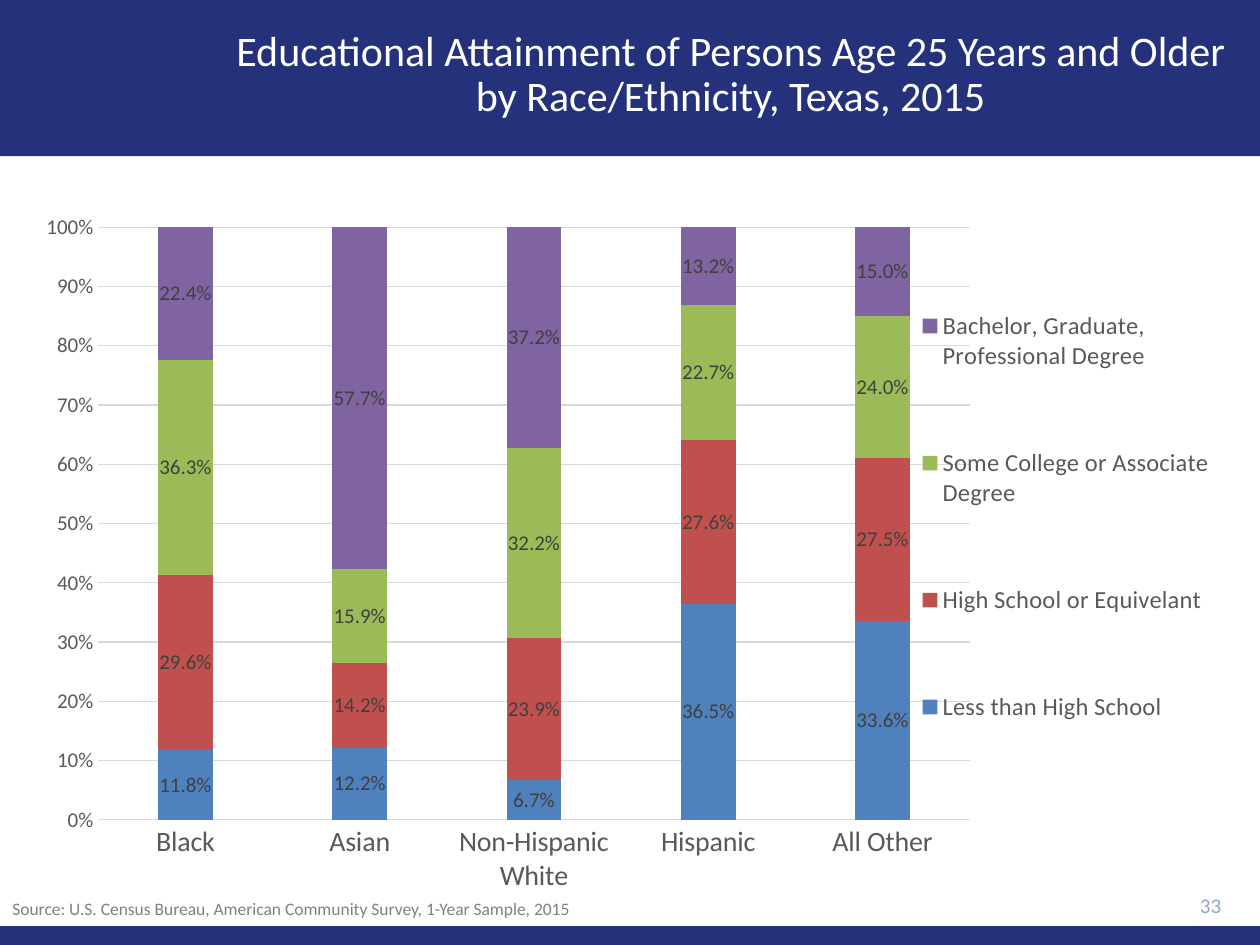
"""Build a slide charting educational attainment by race and ethnicity in Texas."""
from lxml.etree import SubElement
from pptx import Presentation
from pptx.chart.data import CategoryChartData
from pptx.dml.color import RGBColor
from pptx.enum.chart import XL_CHART_TYPE as ChartType, XL_LEGEND_POSITION as LegendPos
from pptx.enum.chart import XL_TICK_MARK as TickMark
from pptx.enum.shapes import MSO_SHAPE as Shape
from pptx.enum.text import MSO_ANCHOR as Anchor, PP_ALIGN as Align
from pptx.oxml.ns import qn
from pptx.util import Inches, Pt

NAVY = RGBColor(0x25, 0x32, 0x7B)
WHITE = RGBColor(0xFF, 0xFF, 0xFF)
PALE_BLUE = RGBColor(0x8F, 0xA5, 0xD1)
GRAY = RGBColor(0x80, 0x80, 0x80)
AXIS_GRAY = RGBColor(0x59, 0x59, 0x59)
LABEL_GRAY = RGBColor(0x40, 0x40, 0x40)
GRID_GRAY = RGBColor(0xD9, 0xD9, 0xD9)
BLUE = RGBColor(0x4F, 0x81, 0xBD)
RED = RGBColor(0xC0, 0x50, 0x4D)
GREEN = RGBColor(0x9B, 0xBB, 0x59)
PURPLE = RGBColor(0x80, 0x64, 0xA2)
FONT = "Calibri"

TITLE = "Educational Attainment of Persons Age 25 Years and Older by Race/Ethnicity, Texas, 2015"
SOURCE = "Source: U.S. Census Bureau, American Community Survey, 1-Year Sample, 2015"
PAGE = "33"
GROUPS = ["Black", "Asian", "Non-Hispanic White", "Hispanic", "All Other"]
LEVELS = [
    ("Less than High School", BLUE, (0.118, 0.122, 0.067, 0.365, 0.336)),
    ("High School or Equivelant", RED, (0.296, 0.142, 0.239, 0.276, 0.275)),
    ("Some College or Associate Degree", GREEN, (0.363, 0.159, 0.322, 0.227, 0.24)),
    ("Bachelor, Graduate, Professional Degree", PURPLE, (0.224, 0.577, 0.372, 0.132, 0.15)),
]
WIDTH, HEIGHT = 10, 7.5
BANDS = [(0, 1.24), (7.35, 0.15)]
CHART_BOX = (0.17, 1.58, 10.17, 5.6)
PLOT_SHARE = (0.06, 0.04, 0.68, 0.84)
LEGEND_SHARE = (0.69, 0.05, 0.25, 0.8)


def style(font, size, color):
    font.name, font.size, font.bold = FONT, Pt(size), False
    font.color.rgb = color


def add_band(slide, top, height):
    band = slide.shapes.add_shape(Shape.RECTANGLE, *map(Inches, (0, top, WIDTH, height)))
    band.shadow.inherit = False
    band.fill.solid()
    band.fill.fore_color.rgb = NAVY
    band.line.fill.background()


def add_text(slide, box, text, size, color, align=Align.LEFT, anchor=Anchor.TOP, spacing=None):
    frame = slide.shapes.add_textbox(*map(Inches, box)).text_frame
    frame.word_wrap = True
    frame.vertical_anchor = anchor
    paragraph = frame.paragraphs[0]
    paragraph.text = text
    paragraph.alignment = align
    paragraph.line_spacing = spacing
    style(paragraph.font, size, color)


def place(part, index, shares, inner=False):
    for old in part.findall(qn("c:layout")):
        part.remove(old)
    layout = part.makeelement(qn("c:layout"))
    part.insert(index, layout)
    manual = SubElement(layout, qn("c:manualLayout"))
    settings = [("layoutTarget", "inner")] if inner else []
    settings += [("xMode", "edge"), ("yMode", "edge"), *zip("xywh", shares)]
    for tag, value in settings:
        SubElement(manual, qn(f"c:{tag}")).set("val", str(value))


def style_axes(chart):
    for axis, size in ((chart.category_axis, 16), (chart.value_axis, 12)):
        axis.major_tick_mark = axis.minor_tick_mark = TickMark.NONE
        style(axis.tick_labels.font, size, AXIS_GRAY)
    values = chart.value_axis
    values.maximum_scale, values.minimum_scale, values.major_unit = 1, 0, 0.1
    values.tick_labels.number_format = "0%"
    values.tick_labels.number_format_is_linked = False
    values.format.line.fill.background()
    for line in (chart.category_axis.format.line, values.major_gridlines.format.line):
        line.color.rgb = GRID_GRAY
        line.width = Pt(0.75)


def add_attainment_chart(slide):
    data = CategoryChartData(number_format="0.0%")
    data.categories = GROUPS
    for level, _, shares in LEVELS:
        data.add_series(level, shares)
    chart = slide.shapes.add_chart(
        ChartType.COLUMN_STACKED_100, *map(Inches, CHART_BOX), data).chart
    chart.has_title = False
    style(chart.font, 10, RGBColor(0, 0, 0))
    style_axes(chart)

    plot = chart.plots[0]
    plot.gap_width, plot.overlap, plot.vary_by_categories = 219, 100, False
    for series, (_, color, _) in zip(plot.series, LEVELS):
        series.format.fill.solid()
        series.format.fill.fore_color.rgb = color
        labels = series.data_labels
        labels.show_value = True
        labels.number_format = "0.0%"
        labels.number_format_is_linked = False
        style(labels.font, 12, LABEL_GRAY)

    chart.has_legend = True
    legend = chart.legend
    legend.position = LegendPos.CORNER
    legend.include_in_layout = False
    style(legend.font, 14, AXIS_GRAY)
    root = chart.element
    place(root.find(f".//{qn('c:plotArea')}"), 0, PLOT_SHARE, inner=True)
    place(root.find(f".//{qn('c:legend')}"), 1, LEGEND_SHARE)


def main():
    deck = Presentation()
    deck.slide_width, deck.slide_height = Inches(WIDTH), Inches(HEIGHT)
    slide = deck.slides.add_slide(deck.slide_layouts[6])
    for top, height in BANDS:
        add_band(slide, top, height)
    add_attainment_chart(slide)
    add_text(slide, (8.9, 7.01, 0.89, 0.34), PAGE, 12, PALE_BLUE, Align.RIGHT, Anchor.MIDDLE)
    add_text(slide, (1.7, 0.1, 8.2, 1), TITLE, 24, WHITE, Align.CENTER, Anchor.MIDDLE, 0.9)
    add_text(slide, (0, 7.08, 7, 0.27), SOURCE, 10, GRAY)
    deck.save("out.pptx")


if __name__ == "__main__":
    main()
